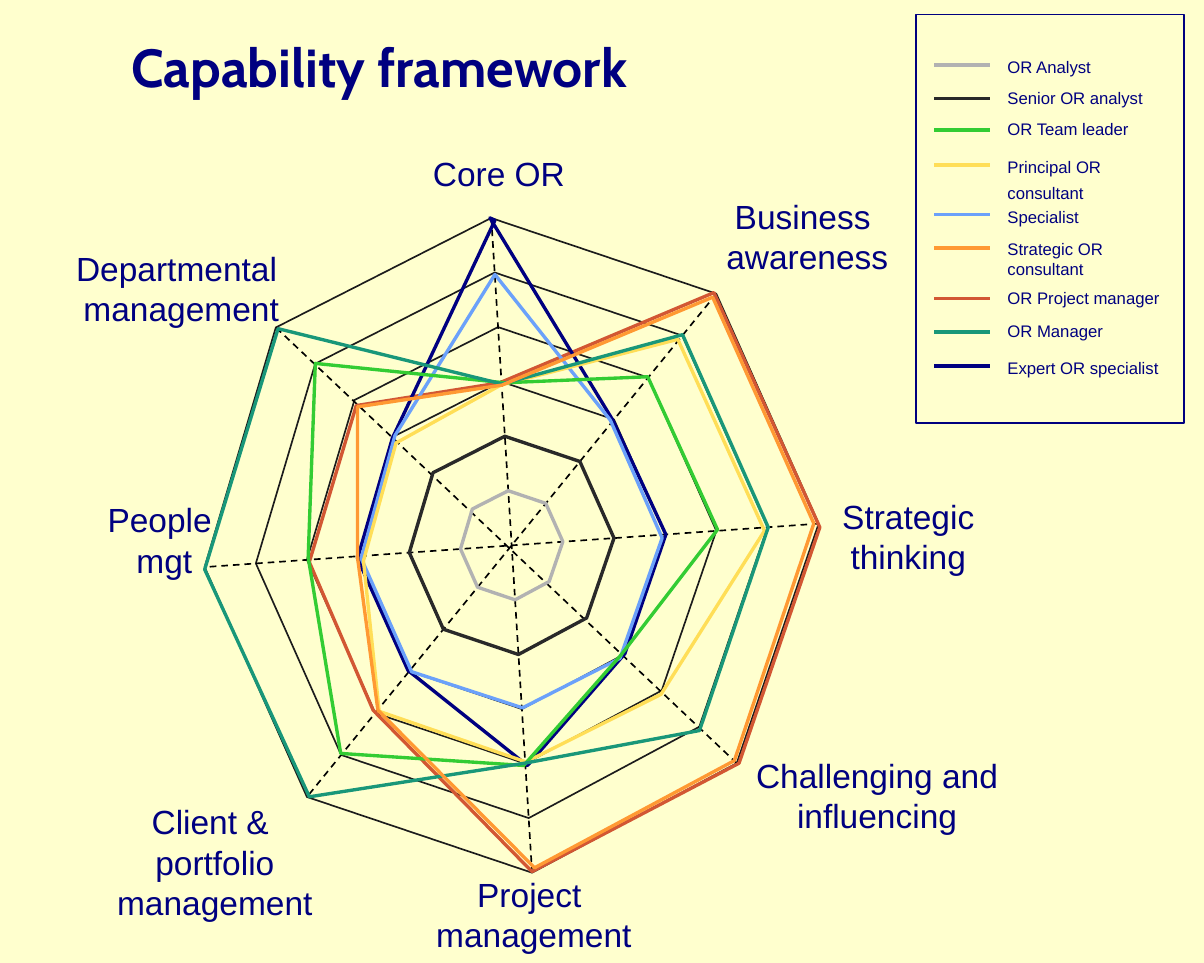
from lxml import etree
from pptx import Presentation
from pptx.dml.color import RGBColor
from pptx.enum.dml import MSO_LINE_DASH_STYLE as Dash
from pptx.enum.shapes import MSO_CONNECTOR as Connector, MSO_SHAPE as Shape
from pptx.enum.text import MSO_ANCHOR as Anchor, MSO_AUTO_SIZE as AutoSize, PP_ALIGN as Align
from pptx.oxml.ns import qn
from pptx.util import Pt

CREAM = RGBColor(0xFF, 0xFF, 0xCE)
NAVY = RGBColor(0x00, 0x00, 0x80)
BLACK = RGBColor(0x00, 0x00, 0x00)
WEB_GREY = RGBColor(0x1C, 0x1C, 0x1C)
SILVER = RGBColor(0xB2, 0xB2, 0xB2)
CHARCOAL = RGBColor(0x29, 0x29, 0x29)
GREEN = RGBColor(0x33, 0xCC, 0x33)
YELLOW = RGBColor(0xFF, 0xDE, 0x57)
SKY = RGBColor(0x6B, 0xA1, 0xFA)
ORANGE = RGBColor(0xFF, 0x99, 0x33)
RUST = RGBColor(0xD2, 0x57, 0x33)
TEAL = RGBColor(0x19, 0x97, 0x79)

presentation = Presentation()
presentation.slide_width, presentation.slide_height = Pt(720), Pt(576)
slide = presentation.slides.add_slide(presentation.slide_layouts[5])
slide.background.fill.solid()
slide.background.fill.fore_color.rgb = CREAM
shapes = slide.shapes


def add_outline(points, color, width):
    """Draw a closed, unfilled polygon through the points."""
    corners = [(Pt(x), Pt(y)) for x, y in points]
    builder = shapes.build_freeform(*corners[0], scale=1.0)
    builder.add_line_segments(corners[1:], close=True)
    outline = builder.convert_to_shape()
    outline.shadow.inherit = False
    outline.fill.background()
    outline.line.color.rgb = color
    outline.line.width = Pt(width)


def add_straight_line(start, end, color, width):
    line = shapes.add_connector(Connector.STRAIGHT, *[Pt(value) for value in (*start, *end)])
    line.line.color.rgb = color
    line.line.width = Pt(width)
    etree.SubElement(line._element.spPr, qn("a:effectLst"))
    return line


# Title
title = shapes.title
title.left, title.top, title.width, title.height = Pt(71.3), Pt(13), Pt(546.5), Pt(57.6)
title.text_frame.text = "Capability framework"
title.text_frame.auto_size = AutoSize.NONE
title.text_frame.vertical_anchor = Anchor.MIDDLE
paragraph = title.text_frame.paragraphs[0]
paragraph.alignment = Align.LEFT
paragraph.line_spacing = 0.89
paragraph.font.name = "Cabin"
paragraph.font.size = Pt(32)
paragraph.font.bold = True
paragraph.font.color.rgb = NAVY

# Web: six rings scaled from the outer corners, clockwise from Core OR
CENTER_X, CENTER_Y = 306, 326.2
LEVELS = 6
OUTER_OFFSETS = [
    (-12.2, -195.8), (122.4, -150.5), (183.6, -13), (134.6, 130.3),
    (12.2, 195.8), (-122.4, 150.5), (-183.6, 13), (-141, -130.3),
]
rings = {
    level: [(CENTER_X + dx * level / LEVELS, CENTER_Y + dy * level / LEVELS)
            for dx, dy in OUTER_OFFSETS]
    for level in range(LEVELS, 0, -1)
}
for ring in rings.values():
    add_outline(ring, WEB_GREY, 1)

outer_ring = rings[LEVELS]
for start, end in zip(outer_ring[:4], outer_ring[4:]):
    add_straight_line(start, end, BLACK, 1).line.dash_style = Dash.DASH

# Role profiles, corners clockwise from Core OR
profiles = [
    (RUST, [(298.8, 229), (427, 175), (490.3, 315.4), (442, 456.5),
            (318.2, 521.3), (223.2, 424.8), (185, 336.2), (213.1, 242.6)]),
    (NAVY, [(293, 130.3), (366.5, 251.3), (398.2, 319.7), (373.7, 391), (315.4, 457.9),
            (244, 401), (213.8, 334), (234.7, 262), (296, 131.8)]),
    (SKY, [(296, 164.2), (365, 251.3), (396, 321.8), (370.8, 393.8),
           (312.5, 423.4), (246.2, 401.8), (216, 334), (236.2, 260.6)]),
    (YELLOW, [(299.5, 230.4), (405.4, 203), (457.2, 317.5), (395.3, 415.4),
              (314.6, 455.8), (226.8, 425.5), (217.4, 335.5), (236.9, 265)]),
    (SILVER, rings[1]),
    (CHARCOAL, rings[2]),
    (GREEN, [(301.7, 229), (387.4, 225.4), (429.1, 316.8), (371.5, 391.7),
             (313.2, 457.9), (203.8, 450.7), (184.3, 333.4), (188.6, 217.4)]),
    (TEAL, [(300.2, 229.7), (408.2, 200.2), (459.4, 315.4), (418.3, 437),
            (313.9, 456.5), (185, 476.6), (122.4, 340.6), (166.3, 196.6)]),
    (ORANGE, [(300.2, 230.4), (426.2, 177.8), (486.7, 313.2), (439.2, 455),
              (319.7, 519.1), (226, 424.8), (213.8, 333.4), (213.8, 243.4)]),
]
for color, points in profiles:
    add_outline(points, color, 2)

# Legend frame and keys: label, colour, key height, label top, line spacing
frame = shapes.add_shape(Shape.RECTANGLE, Pt(548), Pt(8.7), Pt(160), Pt(244.3))
frame.shadow.inherit = False
frame.fill.background()
frame.line.color.rgb = NAVY
frame.line.width = Pt(1)

legend = [
    ("OR Analyst", SILVER, 38.9, 30.2, 1),
    ("Senior OR analyst", CHARCOAL, 59, 49, 1),
    ("OR Team leader", GREEN, 77.8, 67.7, 1),
    ("Principal OR \nconsultant", YELLOW, 98.6, 86.4, 1.3),
    ("Specialist", SKY, 128.2, 120.2, 1),
    ("Strategic OR \nconsultant", ORANGE, 148.3, 139, 1),
    ("OR Project manager", RUST, 178.6, 168.5, 1),
    ("OR Manager", TEAL, 198.7, 188.6, 1),
    ("Expert OR specialist", NAVY, 218.9, 210.2, 1),
]
LEGEND_LABEL_LEFT, LEGEND_LABEL_WIDTH = 595.4, 115
labels = []
for text, color, key_y, top, spacing in legend:
    add_straight_line((558.7, key_y), (591.8, key_y), color, 2)
    labels.append((text, LEGEND_LABEL_LEFT, top, LEGEND_LABEL_WIDTH, 10, Align.LEFT, spacing))

# Axis labels: text, centre, top
axes = [
    ("Core OR", 298.4, 87.8),
    ("Business \nawareness", 482.8, 113.8),
    ("Strategic\nthinking", 543.2, 293),
    ("Challenging and\ninfluencing", 524.5, 447.8),
    ("Project \nmanagement", 319.3, 519.1),
    ("Client & \nportfolio\nmanagement", 128.5, 475.9),
    ("People \nmgt", 98.3, 295.2),
    ("Departmental \nmanagement", 108.4, 144.7),
]
AXIS_LABEL_WIDTH = 170
for text, center, top in axes:
    left = center - AXIS_LABEL_WIDTH / 2
    labels.append((text, left, top, AXIS_LABEL_WIDTH, 20, Align.CENTER, 1))

for text, left, top, width, size, alignment, spacing in labels:
    line_count = text.count("\n") + 1
    height = 7.2 + line_count * size * 1.2 * spacing
    box = shapes.add_textbox(Pt(left), Pt(top), Pt(width), Pt(height))
    box.text_frame.word_wrap = True
    paragraph = box.text_frame.paragraphs[0]
    paragraph.text = text
    paragraph.alignment = alignment
    paragraph.line_spacing = float(spacing)
    paragraph.font.name = "Arial"
    paragraph.font.size = Pt(size)
    paragraph.font.color.rgb = NAVY

presentation.save("out.pptx")
